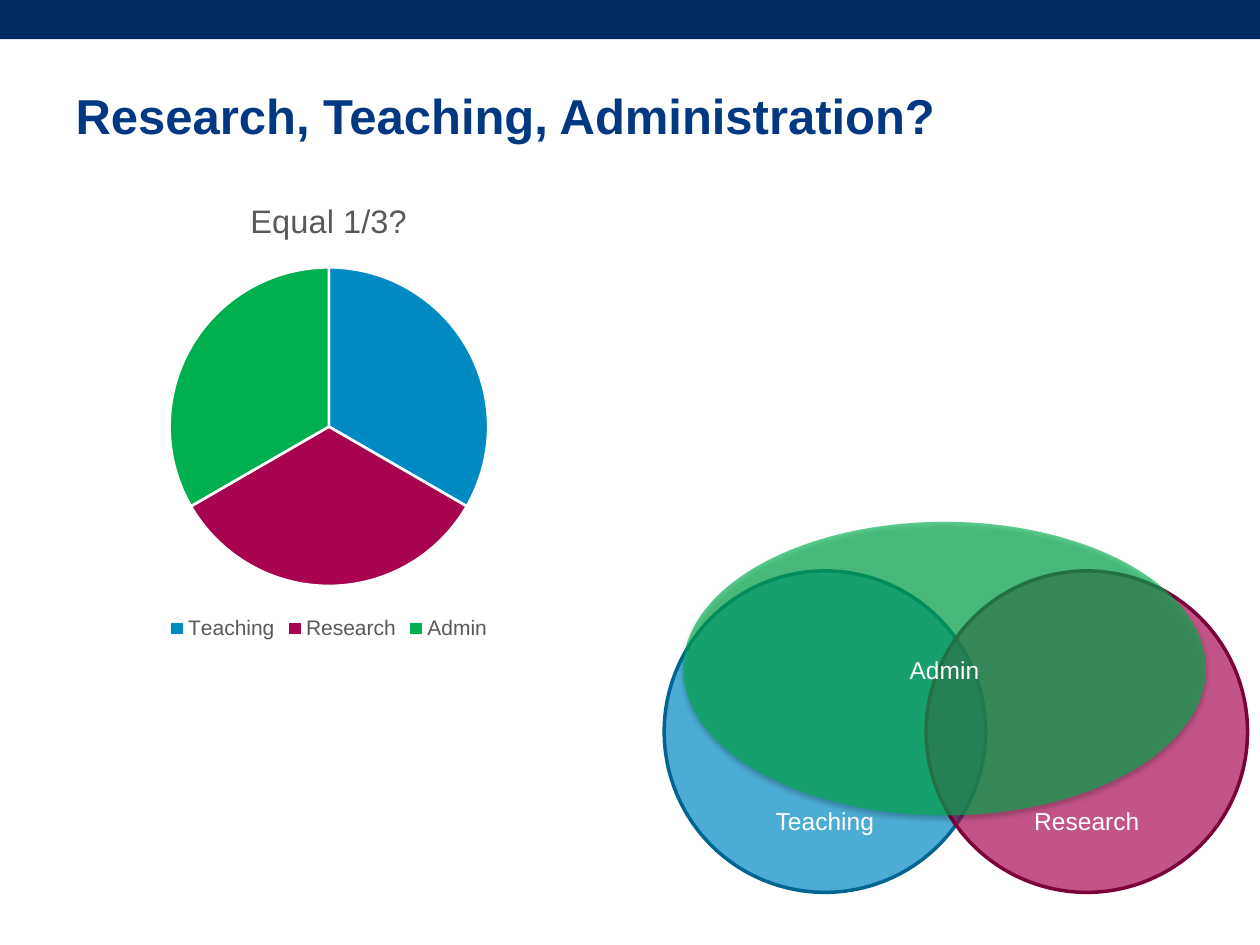
from dataclasses import dataclass
from typing import Optional

from lxml import etree
from pptx import Presentation
from pptx.chart.data import CategoryChartData
from pptx.dml.color import RGBColor
from pptx.enum.chart import XL_CHART_TYPE, XL_LEGEND_POSITION
from pptx.enum.shapes import MSO_SHAPE
from pptx.enum.text import MSO_ANCHOR, MSO_AUTO_SIZE, PP_ALIGN
from pptx.oxml.ns import qn
from pptx.util import Cm, Pt

PIE = XL_CHART_TYPE.PIE
LEGEND_BOTTOM = XL_LEGEND_POSITION.BOTTOM
RECTANGLE, OVAL = MSO_SHAPE.RECTANGLE, MSO_SHAPE.OVAL
MIDDLE, BOTTOM = MSO_ANCHOR.MIDDLE, MSO_ANCHOR.BOTTOM
NO_AUTOFIT = MSO_AUTO_SIZE.NONE
LEFT, CENTER = PP_ALIGN.LEFT, PP_ALIGN.CENTER


@dataclass(frozen=True)
class Theme:
    font: str = "Arial"
    bar: str = "002A62"
    title: str = "003882"
    white: str = "FFFFFF"
    grey: str = "595959"
    teaching: str = "008AC4"
    teaching_edge: str = "006691"
    research: str = "A8034F"
    research_edge: str = "7C023A"
    admin: str = "00B050"
    title_size: float = 28
    chart_title_size: float = 18.6
    legend_size: float = 12
    label_size: float = 14


@dataclass(frozen=True)
class Box:
    left: float
    top: float
    width: float
    height: float

    def lengths(self) -> tuple:
        return Cm(self.left), Cm(self.top), Cm(self.width), Cm(self.height)


@dataclass(frozen=True)
class Area:
    name: str
    oval: Box
    label: Box
    anchor: MSO_ANCHOR
    color: str
    opacity: int
    edge: Optional[str] = None


THEME = Theme()
CIRCLE_SIZE, LABEL_SIZE = 6.48, 4.6
CIRCLE_TOP, LABEL_TOP = 11.51, 12.47
AREAS = (
    Area("Teaching", Box(13.39, CIRCLE_TOP, CIRCLE_SIZE, CIRCLE_SIZE),
         Box(14.33, LABEL_TOP, LABEL_SIZE, LABEL_SIZE), BOTTOM,
         THEME.teaching, 70, THEME.teaching_edge),
    Area("Research", Box(18.67, CIRCLE_TOP, CIRCLE_SIZE, CIRCLE_SIZE),
         Box(19.61, LABEL_TOP, LABEL_SIZE, LABEL_SIZE), BOTTOM,
         THEME.research, 68, THEME.research_edge),
    Area("Admin", Box(13.77, 10.52, 10.54, 5.92),
         Box(15.32, 11.4, 7.44, 4.19), MIDDLE, THEME.admin, 64),
)


def style_font(font, size: float, color: str, bold: bool = False) -> None:
    font.name = THEME.font
    font.size = Pt(size)
    font.bold = bold
    font.color.rgb = RGBColor.from_string(color)


def add_filled_shape(slide, kind: MSO_SHAPE, box: Box, color: str):
    shape = slide.shapes.add_shape(kind, *box.lengths())
    shape.shadow.inherit = False
    shape.fill.solid()
    shape.fill.fore_color.rgb = RGBColor.from_string(color)
    shape.line.fill.background()
    return shape


def set_opacity(color_element, percent: int) -> None:
    etree.SubElement(color_element, qn("a:alpha"), val=str(percent * 1000))


def add_soft_shadow(shape) -> None:
    effects = shape.element.spPr.find(qn("a:effectLst"))
    shadow = etree.SubElement(
        effects, qn("a:outerShdw"), blurRad=str(Pt(3.1)), dist=str(Pt(1.8)),
        dir="5400000", rotWithShape="0")
    set_opacity(etree.SubElement(shadow, qn("a:srgbClr"), val="000000"), 35)


def add_label(slide, area: Area) -> None:
    frame = slide.shapes.add_textbox(*area.label.lengths()).text_frame
    frame.word_wrap = True
    frame.vertical_anchor = area.anchor
    frame.margin_left = frame.margin_right = frame.margin_top = Cm(0.15)
    frame.margin_bottom = Cm(0.22) if area.anchor == BOTTOM else Cm(0.15)
    para = frame.paragraphs[0]
    para.alignment = CENTER
    span = para.add_run()
    span.text = area.name
    style_font(span.font, THEME.label_size, THEME.white)


def add_area(slide, area: Area) -> None:
    oval = add_filled_shape(slide, OVAL, area.oval, area.color)
    set_opacity(oval.element.spPr.find(qn("a:solidFill"))[0], area.opacity)
    if area.edge:
        oval.line.color.rgb = RGBColor.from_string(area.edge)
        oval.line.width = Pt(2)
    else:
        add_soft_shadow(oval)
    add_label(slide, area)


def fill_title(slide, text: str, box: Box) -> None:
    title = slide.shapes.title
    title.left, title.top, title.width, title.height = box.lengths()
    frame = title.text_frame
    frame.auto_size = NO_AUTOFIT
    frame.vertical_anchor = MIDDLE
    para = frame.paragraphs[0]
    para.alignment = LEFT
    span = para.add_run()
    span.text = text
    style_font(span.font, THEME.title_size, THEME.title, bold=True)


def add_pie(slide, name: str, box: Box) -> None:
    data = CategoryChartData()
    data.categories = [area.name for area in AREAS]
    data.add_series(name, [33] * len(AREAS))
    chart = slide.shapes.add_chart(PIE, *box.lengths(), data).chart
    style_font(chart.font, THEME.legend_size, THEME.grey)
    chart.has_title = True
    span = chart.chart_title.text_frame.paragraphs[0].add_run()
    span.text = name
    style_font(span.font, THEME.chart_title_size, THEME.grey)
    chart.chart_title.include_in_layout = False
    chart.has_legend = True
    chart.legend.position = LEGEND_BOTTOM
    chart.legend.include_in_layout = False
    style_font(chart.legend.font, THEME.legend_size, THEME.grey)
    plot = chart.plots[0]
    plot.vary_by_categories = True
    for index, area in enumerate(AREAS):
        slice_format = plot.series[0].points[index].format
        slice_format.fill.solid()
        slice_format.fill.fore_color.rgb = RGBColor.from_string(area.color)
        slice_format.line.color.rgb = RGBColor.from_string(THEME.white)
        slice_format.line.width = Pt(1.5)


def main() -> None:
    deck = Presentation()
    deck.slide_width, deck.slide_height = Cm(25.4), Cm(19.05)
    page = deck.slides.add_slide(deck.slide_layouts[5])
    add_filled_shape(page, RECTANGLE, Box(0, 0, 25.4, 0.79), THEME.bar)
    fill_title(page, "Research, Teaching, Administration?",
               Box(1.27, 1.52, 23.04, 1.6))
    add_pie(page, "Equal 1/3?", Box(0, 3.58, 13.26, 9.42))
    for area in AREAS:
        add_area(page, area)
    deck.save("out.pptx")


if __name__ == "__main__":
    main()
